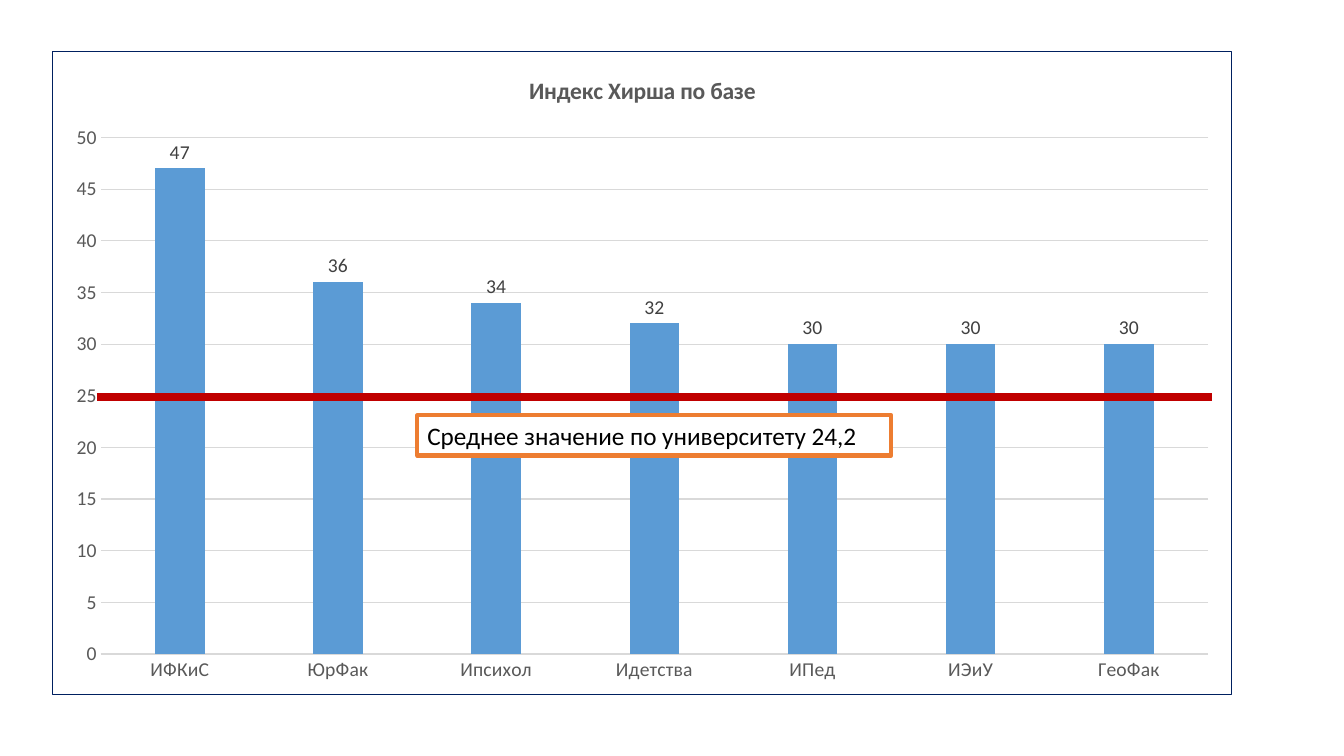
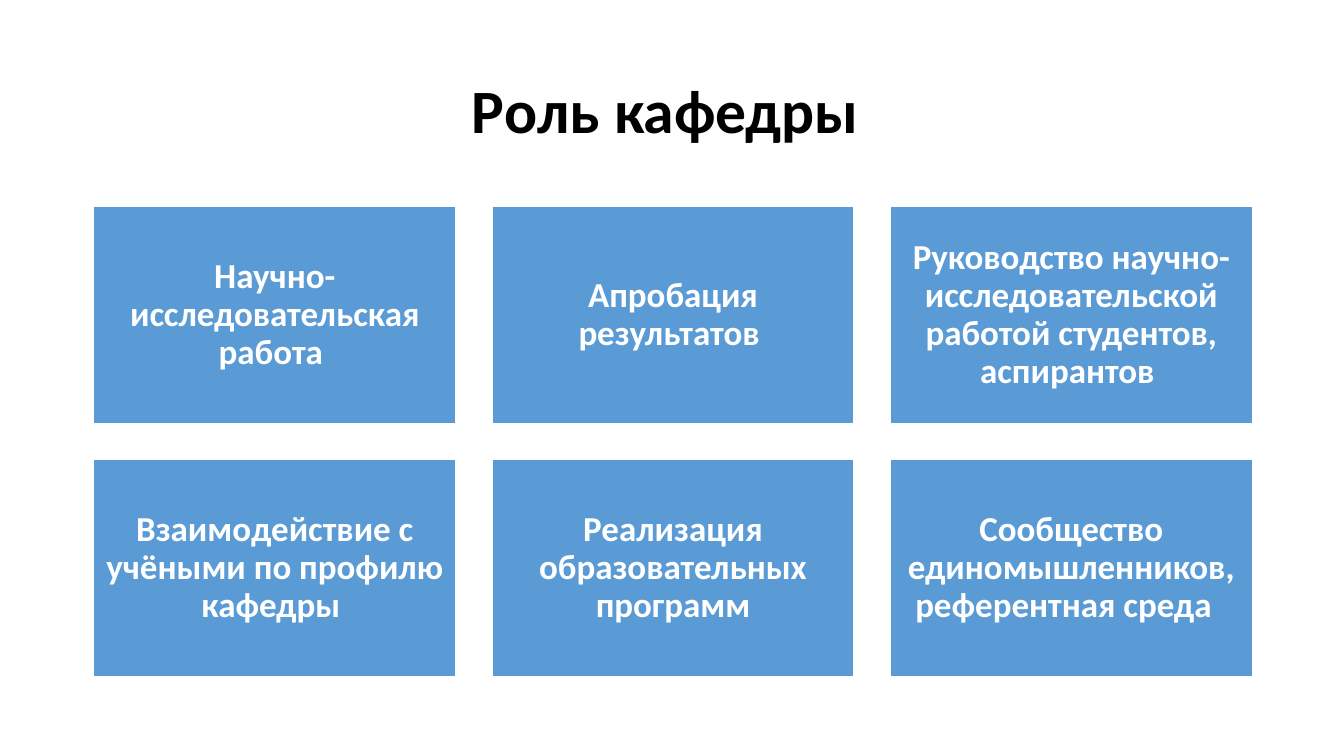
"""Builds two slides: a citation index chart and the roles of a department."""
from lxml.etree import SubElement
from pptx import Presentation
from pptx.chart.data import CategoryChartData
from pptx.dml.color import RGBColor
from pptx.enum.chart import XL_CHART_TYPE, XL_LABEL_POSITION, XL_TICK_MARK
from pptx.enum.shapes import MSO_CONNECTOR, MSO_SHAPE
from pptx.enum.text import MSO_ANCHOR, PP_ALIGN
from pptx.oxml import parse_xml
from pptx.oxml.ns import nsdecls, qn
from pptx.util import Inches, Pt

FONT = "Calibri"
BLACK, WHITE, BLUE, ORANGE, RED, NAVY = "000000", "FFFFFF", "5B9BD5", "ED7D31", "C00000", "002060"
GRID, AXIS_TEXT, LABEL_TEXT = "D9D9D9", "595959", "404040"

CHART_TITLE = "Индекс Хирша по базе"
SCORES = {"ИФКиС": 47, "ЮрФак": 36, "Ипсихол": 34, "Идетства": 32, "ИПед": 30, "ИЭиУ": 30, "ГеоФак": 30}
AVERAGE = "Среднее значение по университету 24,2"
ROLES_TITLE = "Роль кафедры "
ROLES = [
    "Научно-исследовательская работа ",
    "Апробация результатов ",
    "Руководство научно-исследовательской работой студентов, аспирантов ",
    "Взаимодействие с учёными по профилю кафедры ",
    "Реализация образовательных программ",
    "Сообщество единомышленников, референтная среда  ",
]
COLUMNS = 3
CARD_LEFT, CARD_TOP, CARD_W, CARD_H, GAP = 0.93, 2.05, 3.59, 2.15, 0.36


def rgb(value):
    return RGBColor.from_string(value)


def style(font, size, color, bold=False):
    font.name, font.size, font.bold = FONT, Pt(size), bold
    font.color.rgb = rgb(color)


def stroke(line, color, width):
    line.color.rgb = rgb(color)
    line.width = Pt(width)


def write(sp, text, size, color, bold=False, align=PP_ALIGN.CENTER, spacing=0.9):
    tf = sp.text_frame
    tf.word_wrap = True
    tf.vertical_anchor = MSO_ANCHOR.MIDDLE
    p = tf.paragraphs[0]
    p.alignment, p.line_spacing = align, spacing
    r = p.add_run()
    r.text = text
    style(r.font, size, color, bold)
    return tf


def add_box(s, at, fill, line, width):
    sp = s.shapes.add_shape(MSO_SHAPE.RECTANGLE, *map(Inches, at))
    sp.shadow.inherit = False
    sp.fill.solid()
    sp.fill.fore_color.rgb = rgb(fill)
    stroke(sp.line, line, width)
    return sp


def add_scores(s):
    data = CategoryChartData()
    data.categories = list(SCORES)
    data.add_series(CHART_TITLE, list(SCORES.values()))
    at = map(Inches, (0.52, 0.51, 11.7, 6.39))
    chart = s.shapes.add_chart(XL_CHART_TYPE.COLUMN_CLUSTERED, *at, data).chart
    style(chart.font, 14, BLACK)
    chart.has_legend = False
    chart.has_title = True
    r = chart.chart_title.text_frame.paragraphs[0].add_run()
    r.text = CHART_TITLE
    style(r.font, 16.8, AXIS_TEXT, True)

    for axis in (chart.category_axis, chart.value_axis):
        axis.major_tick_mark = axis.minor_tick_mark = XL_TICK_MARK.NONE
        style(axis.tick_labels.font, 14, AXIS_TEXT)
    stroke(chart.category_axis.format.line, GRID, 0.75)
    values = chart.value_axis
    values.format.line.fill.background()
    stroke(values.major_gridlines.format.line, GRID, 0.75)
    values.minimum_scale, values.maximum_scale, values.major_unit = 0, 50, 5

    plot = chart.plots[0]
    plot.gap_width, plot.overlap, plot.vary_by_categories = 219, -27, False
    bars = plot.series[0]
    bars.format.fill.solid()
    bars.format.fill.fore_color.rgb = rgb(BLUE)
    labels = bars.data_labels
    labels.show_value = True
    labels.position = XL_LABEL_POSITION.OUTSIDE_END
    style(labels.font, 14, LABEL_TEXT)

    border = parse_xml(
        f'<c:spPr {nsdecls("c", "a")}><a:solidFill><a:srgbClr val="{WHITE}"/></a:solidFill>'
        f'<a:ln w="{Pt(0.75)}"><a:solidFill><a:srgbClr val="{NAVY}"/></a:solidFill></a:ln></c:spPr>'
    )
    chart.element.find(qn("c:chart")).addnext(border)


def add_average(s):
    ends = map(Inches, (0.96, 3.94, 12.02, 3.94))
    line = s.shapes.add_connector(MSO_CONNECTOR.STRAIGHT, *ends)
    stroke(line.line, RED, 6)
    SubElement(line.element.spPr, qn("a:effectLst"))
    note = add_box(s, (4.14, 4.12, 4.7, 0.4), WHITE, ORANGE, 3)
    write(note, AVERAGE, 18, BLACK, align=PP_ALIGN.LEFT, spacing=1)


def add_roles(s):
    for i, role in enumerate(ROLES):
        row, col = divmod(i, COLUMNS)
        at = (CARD_LEFT + col * (CARD_W + GAP), CARD_TOP + row * (CARD_H + GAP), CARD_W, CARD_H)
        tf = write(add_box(s, at, BLUE, WHITE, 1), role, 25, WHITE, True)
        tf.margin_left = tf.margin_right = tf.margin_top = tf.margin_bottom = Inches(0.1)
    title = s.shapes.add_textbox(*map(Inches, (0.92, 0.4, 11.5, 1.45)))
    write(title, ROLES_TITLE, 44, BLACK, True)


def main():
    prs = Presentation()
    prs.slide_width, prs.slide_height = Inches(13.33), Inches(7.5)
    for parts in ((add_scores, add_average), (add_roles,)):
        s = prs.slides.add_slide(prs.slide_layouts[6])
        for add_part in parts:
            add_part(s)
    prs.save("out.pptx")


if __name__ == "__main__":
    main()
